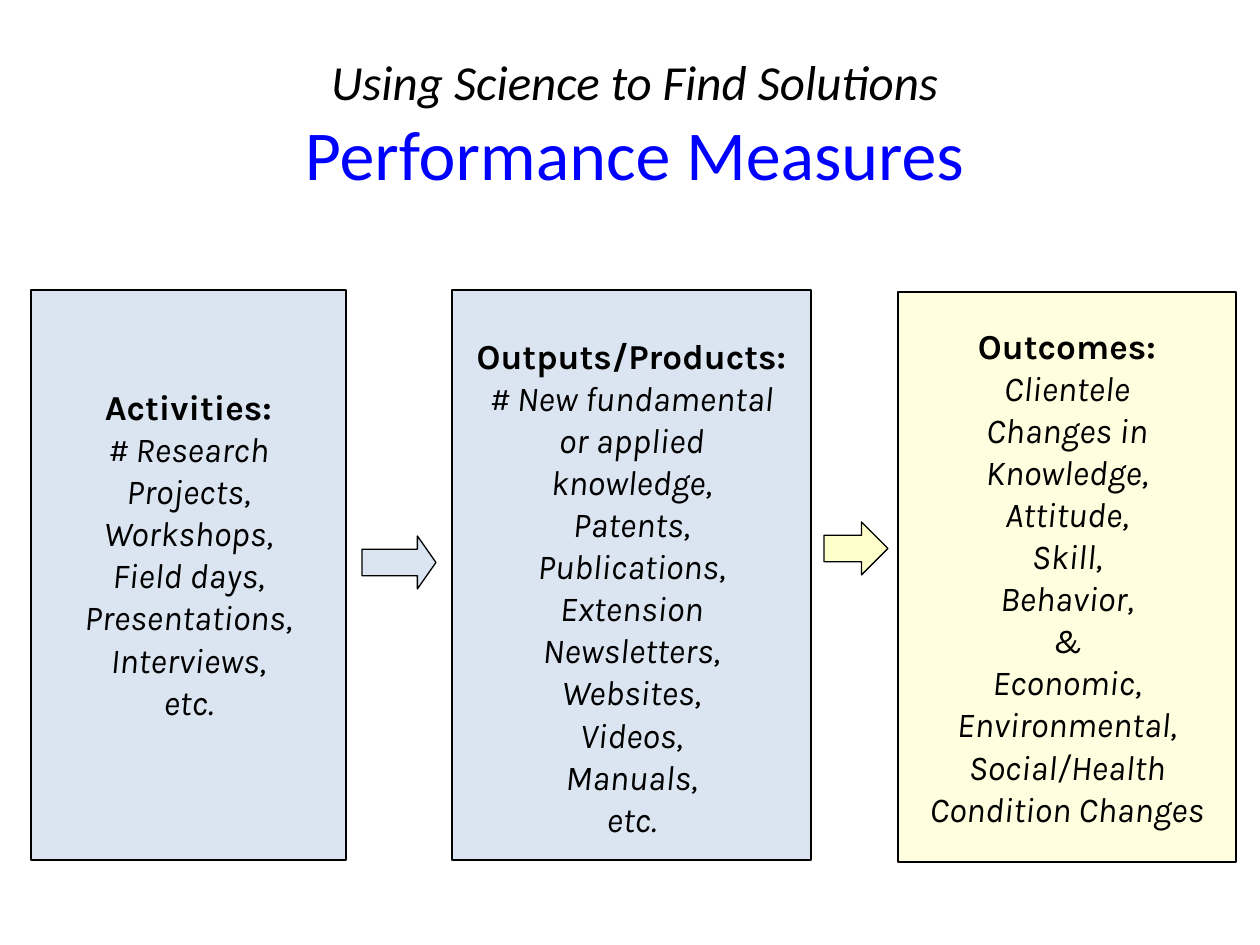
from lxml.etree import SubElement
from pptx import Presentation
from pptx.dml.color import RGBColor
from pptx.enum.shapes import MSO_SHAPE
from pptx.enum.text import MSO_ANCHOR, MSO_AUTO_SIZE, PP_ALIGN
from pptx.oxml.ns import qn
from pptx.util import Pt

SCALE = 914400 / 126
BLUE, YELLOW = "B9CDE5", "FFFF99"
INSET = 6


def px(n):
    return round(n * SCALE)


def color(hex_string):
    return RGBColor.from_string(hex_string)


def place(sp, box):
    sp.left, sp.top, sp.width, sp.height = map(px, box)


def style(sp, fill, opacity):
    """Give a shape a translucent fill and a thin black line."""
    sp.shadow.inherit = False
    sp.fill.solid()
    sp.fill.fore_color.rgb = color(fill)
    clr = sp.fill._xPr.find(qn("a:solidFill"))[0]
    SubElement(clr, qn("a:alpha"), val=str(opacity * 1000))
    sp.line.color.rgb = color("000000")
    sp.line.width = Pt(0.75)


def format_font(font, name, size, hex_string, bold=False, italic=False):
    font.name, font.size = name, Pt(size)
    font.bold, font.italic = bold, italic
    font.color.rgb = color(hex_string)


def add_title(s, box, kicker, heading):
    sp = s.shapes.title
    place(sp, box)
    tf = sp.text_frame
    tf.text = f"{kicker}\n{heading}"
    tf.word_wrap = True
    tf.auto_size = MSO_AUTO_SIZE.NONE
    tf.vertical_anchor = MSO_ANCHOR.TOP
    tf.margin_top, tf.margin_bottom = px(18), 0
    for p, size, hex_string in zip(tf.paragraphs, (28, 40), ("000000", "0000FF")):
        p.alignment = PP_ALIGN.CENTER
        format_font(p.runs[0].font, "Calibri", size, hex_string, italic=size == 28)


def add_panel(s, box, fill, opacity, heading, lines, extra_top=0, extra_bottom=0):
    sp = s.shapes.add_shape(MSO_SHAPE.RECTANGLE, *map(px, box))
    style(sp, fill, opacity)
    tf = sp.text_frame
    tf.text = "\n".join([heading, *lines])
    tf.word_wrap = False
    tf.vertical_anchor = MSO_ANCHOR.MIDDLE
    tf.margin_top = px(INSET + extra_top)
    tf.margin_bottom = px(INSET + extra_bottom)
    for i, p in enumerate(tf.paragraphs):
        p.alignment = PP_ALIGN.CENTER
        format_font(p.runs[0].font, "Karla", 20, "000000", bold=i == 0, italic=i > 0)


def add_arrow(s, box, fill, head):
    sp = s.shapes.add_shape(MSO_SHAPE.RIGHT_ARROW, *map(px, box))
    sp.adjustments[1] = head
    style(sp, fill, 50)


def main():
    prs = Presentation()
    prs.slide_width, prs.slide_height = px(1260), px(945)
    s = prs.slides.add_slide(prs.slide_layouts[5])

    add_title(s, (87, 34, 1095, 158),
              "Using Science to Find Solutions", "Performance Measures")
    add_panel(s, (31, 290, 315, 570), BLUE, 50, "Activities:",
              ["# Research", "Projects,", "Workshops,", "Field days,",
               "Presentations,", "Interviews,", "etc."], extra_bottom=42)
    add_panel(s, (452, 290, 359, 570), BLUE, 50, "Outputs/Products:",
              ["# New fundamental", "or applied", "knowledge,", "Patents,",
               "Publications,", "Extension", "Newsletters,", "Websites,",
               "Videos,", "Manuals,", "etc."], extra_top=24)
    add_panel(s, (898, 292, 338, 570), YELLOW, 30, "Outcomes:",
              ["Clientele", "Changes in", "Knowledge,", "Attitude,", "Skill,",
               "Behavior,", "&", "Economic,", "Environmental,",
               "Social/Health", "Condition Changes"])
    add_arrow(s, (362, 536, 74, 53), BLUE, 0.35)
    add_arrow(s, (824, 522, 64, 53), YELLOW, 0.5)
    prs.save("out.pptx")


if __name__ == "__main__":
    main()
